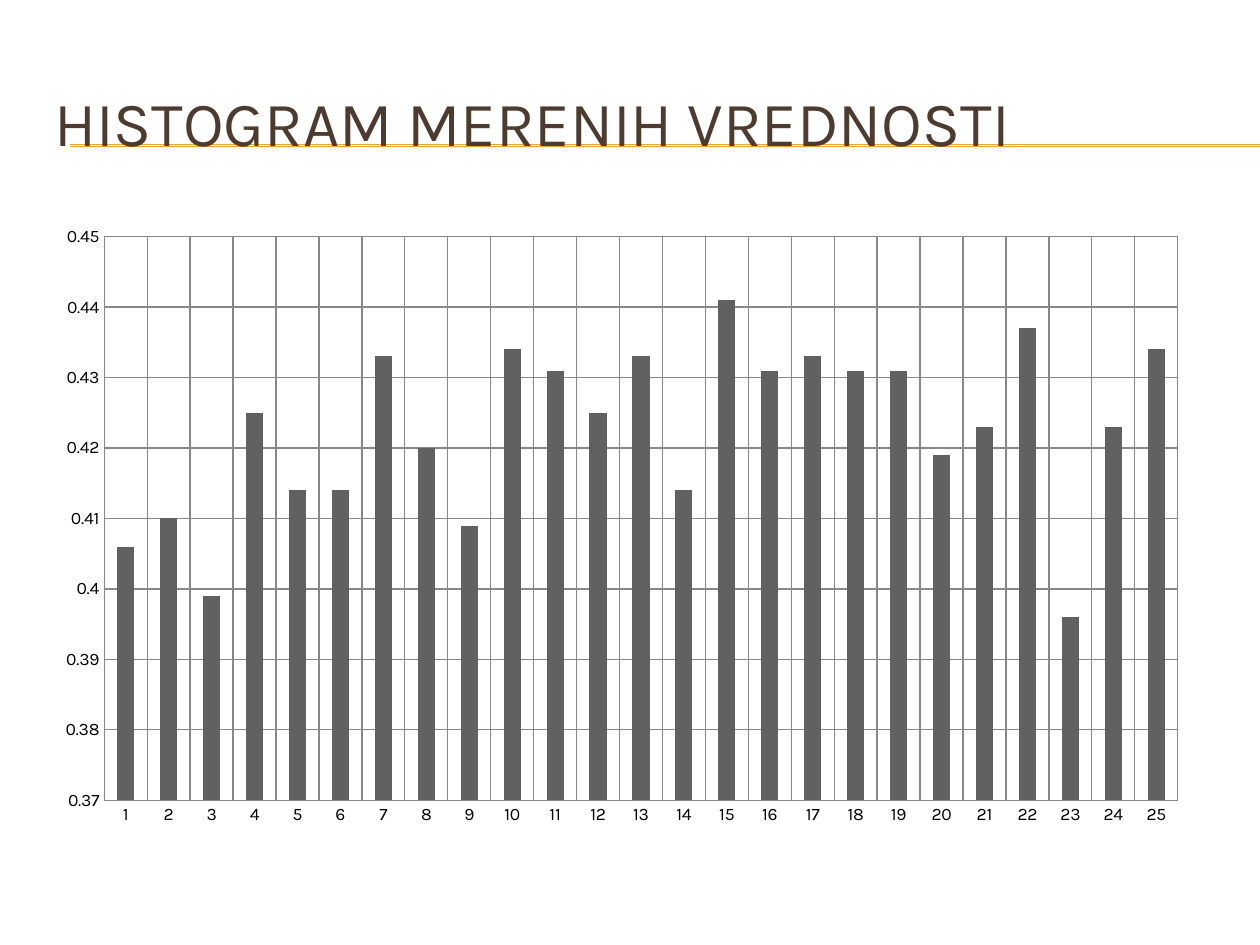
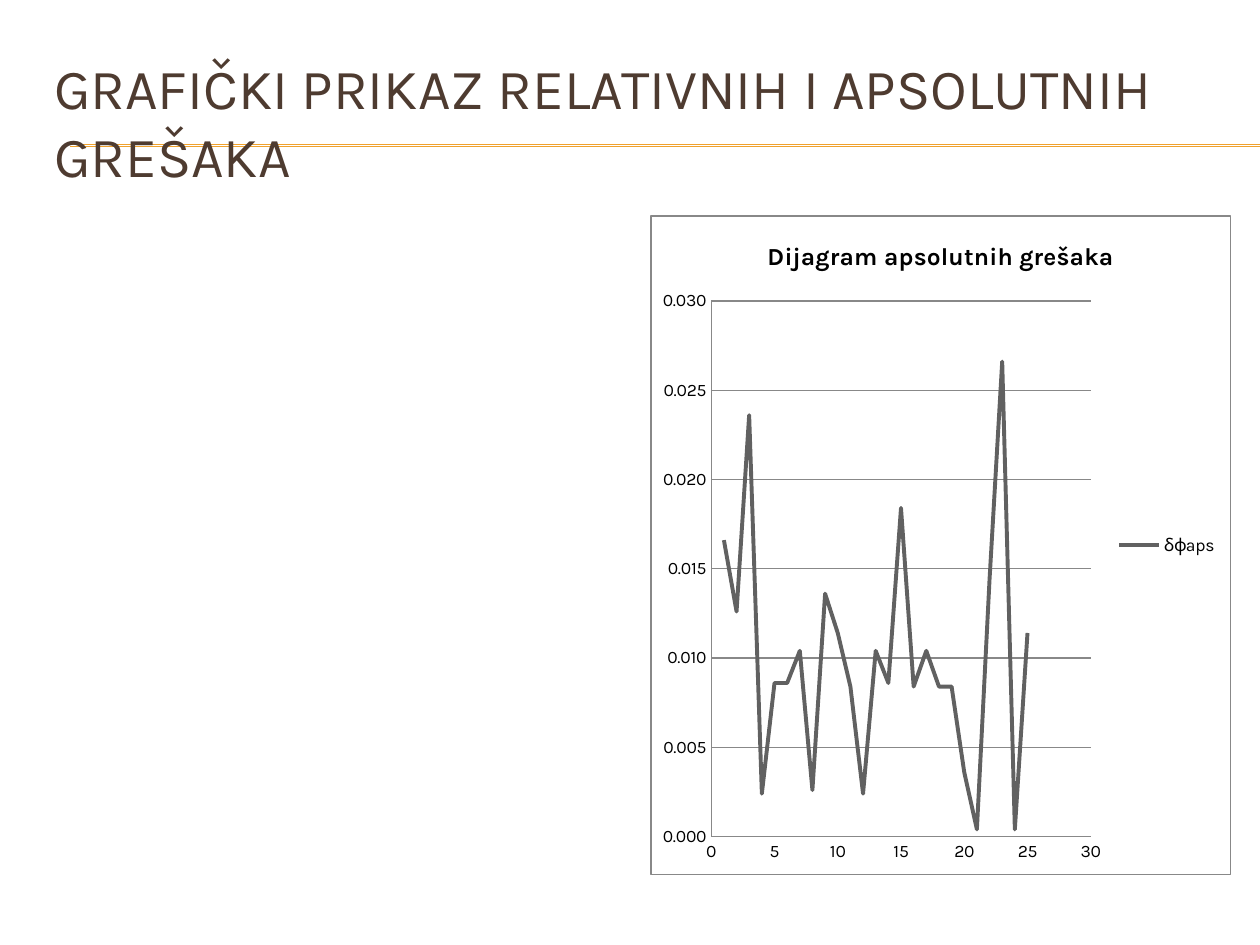
"""Build two slides that chart measured values and their absolute errors."""
from lxml.etree import SubElement
from pptx import Presentation
from pptx.chart.data import CategoryChartData, XyChartData
from pptx.dml.color import RGBColor
from pptx.enum.chart import XL_CHART_TYPE as Kind, XL_LEGEND_POSITION as LegendPlace
from pptx.enum.chart import XL_TICK_MARK as Tick
from pptx.enum.text import MSO_ANCHOR as Anchor
from pptx.oxml import parse_xml
from pptx.oxml.ns import nsdecls, qn
from pptx.util import Cm, Pt

FONT = "Karla"
COLORS = {"title": "4E3B30", "rule": "F0A22E", "series": "616161",
          "grid": "888888", "text": "000000", "paper": "FFFFFF"}
RULE_HEIGHTS = (2.92, 2.95)
MEASURED = (0.406, 0.410, 0.399, 0.425, 0.414, 0.414, 0.433, 0.420, 0.409,
            0.434, 0.431, 0.425, 0.433, 0.414, 0.441, 0.431, 0.433, 0.431,
            0.431, 0.419, 0.423, 0.437, 0.396, 0.423, 0.434)
MEAN = round(sum(MEASURED) / len(MEASURED), 4)
ERRORS = [round(abs(value - MEAN), 4) for value in MEASURED]
HISTOGRAM = {
    "title": "HISTOGRAM MERENIH VREDNOSTI", "size": 36,
    "box": (0.84, 4.32, 23.37, 12.57), "plot": (0.054, 0.036, 0.926, 0.904),
    "scale": (0.37, 0.45, 0.01), "format": "General"}
DIAGRAM = {
    "title": "GRAFIČKI PRIKAZ RELATIVNIH I APSOLUTNIH GREŠAKA", "size": 32.4,
    "box": (13.11, 4.34, 11.71, 13.31), "plot": (0.104, 0.129, 0.655, 0.813),
    "scale": (0, 0.03, 0.005), "format": "0.000",
    "heading": "Dijagram apsolutnih grešaka", "series": "δϕaps"}


def rgb(key):
    return RGBColor.from_string(COLORS[key])


def write(frame, text, *, size, color="text", bold=False):
    run = frame.paragraphs[0].add_run()
    run.text = text
    run.font.name, run.font.size, run.font.bold = FONT, Pt(size), bold
    run.font.color.rgb = rgb(color)


def start_slide(deck, content):
    slide = deck.slides.add_slide(deck.slide_layouts[6])
    for height in RULE_HEIGHTS:
        rule = slide.shapes.add_connector(1, Cm(1.42), Cm(height), Cm(25.4), Cm(height))
        rule.line.color.rgb, rule.line.width = rgb("rule"), Pt(0.75)
        SubElement(rule._element.spPr, qn("a:effectLst"))
    title = slide.shapes.add_textbox(Cm(0.84), Cm(1.27), Cm(24.13), Cm(2.34)).text_frame
    title.word_wrap, title.vertical_anchor = True, Anchor.MIDDLE
    write(title, content["title"], size=content["size"], color="title")
    return slide


def set_scale(axis, low, high, step):
    axis.minimum_scale, axis.maximum_scale, axis.major_unit = low, high, step


def add_chart(slide, kind, content, data):
    chart = slide.shapes.add_chart(kind, *map(Cm, content["box"]), data).chart
    chart.has_legend = chart.has_title = False
    chart.font.name, chart.font.size = FONT, Pt(10)
    chart.font.color.rgb = rgb("text")
    for axis in (chart.category_axis, chart.value_axis):
        axis.major_tick_mark = axis.minor_tick_mark = Tick.NONE
        axis.has_major_gridlines = True
        for line in (axis.format.line, axis.major_gridlines.format.line):
            line.color.rgb, line.width = rgb("grid"), Pt(0.75)
    set_scale(chart.value_axis, *content["scale"])
    labels = chart.value_axis.tick_labels
    labels.number_format, labels.number_format_is_linked = content["format"], False
    chart.plots[0].vary_by_categories = False
    place_plot(chart, content["plot"])
    return chart


def place_plot(chart, fractions):
    area = chart._chartSpace.chart.plotArea
    for layout in area.findall(qn("c:layout")):
        area.remove(layout)
    edges = "".join(f'<c:{key} val="{value}"/>' for key, value in zip("xywh", fractions))
    area.insert(0, parse_xml(
        f'<c:layout {nsdecls("c")}><c:manualLayout><c:layoutTarget val="inner"/>'
        f'<c:xMode val="edge"/><c:yMode val="edge"/>{edges}</c:manualLayout></c:layout>'))


def frame_chart(chart):
    chart._chartSpace.find(qn("c:txPr")).addprevious(parse_xml(
        f'<c:spPr {nsdecls("c", "a")}>'
        f'<a:solidFill><a:srgbClr val="{COLORS["paper"]}"/></a:solidFill>'
        f'<a:ln w="{Pt(0.75)}"><a:solidFill><a:srgbClr val="{COLORS["grid"]}"/>'
        '</a:solidFill></a:ln></c:spPr>'))


def add_histogram(deck):
    data = CategoryChartData()
    data.categories = [str(number) for number in range(1, len(MEASURED) + 1)]
    data.add_series("Series 1", MEASURED)
    chart = add_chart(start_slide(deck, HISTOGRAM), Kind.COLUMN_CLUSTERED, HISTOGRAM, data)
    chart.plots[0].gap_width = 150
    bars = chart.series[0].format.fill
    bars.solid()
    bars.fore_color.rgb = rgb("series")


def add_error_diagram(deck):
    data = XyChartData()
    errors = data.add_series(DIAGRAM["series"])
    for number, error in enumerate(ERRORS, 1):
        errors.add_data_point(number, error)
    chart = add_chart(start_slide(deck, DIAGRAM), Kind.XY_SCATTER_LINES_NO_MARKERS,
                      DIAGRAM, data)
    frame_chart(chart)
    chart.category_axis.has_major_gridlines = False
    set_scale(chart.category_axis, 0, 30, 5)
    curve = chart.series[0]
    curve.smooth = False
    curve.format.line.color.rgb, curve.format.line.width = rgb("series"), Pt(2.25)
    chart.has_title = True
    write(chart.chart_title.text_frame, DIAGRAM["heading"], size=14, bold=True)
    chart.has_legend = True
    chart.legend.position, chart.legend.include_in_layout = LegendPlace.RIGHT, False


def main():
    deck = Presentation()
    deck.slide_width, deck.slide_height = Cm(25.4), Cm(19.05)
    add_histogram(deck)
    add_error_diagram(deck)
    deck.save("out.pptx")


if __name__ == "__main__":
    main()
